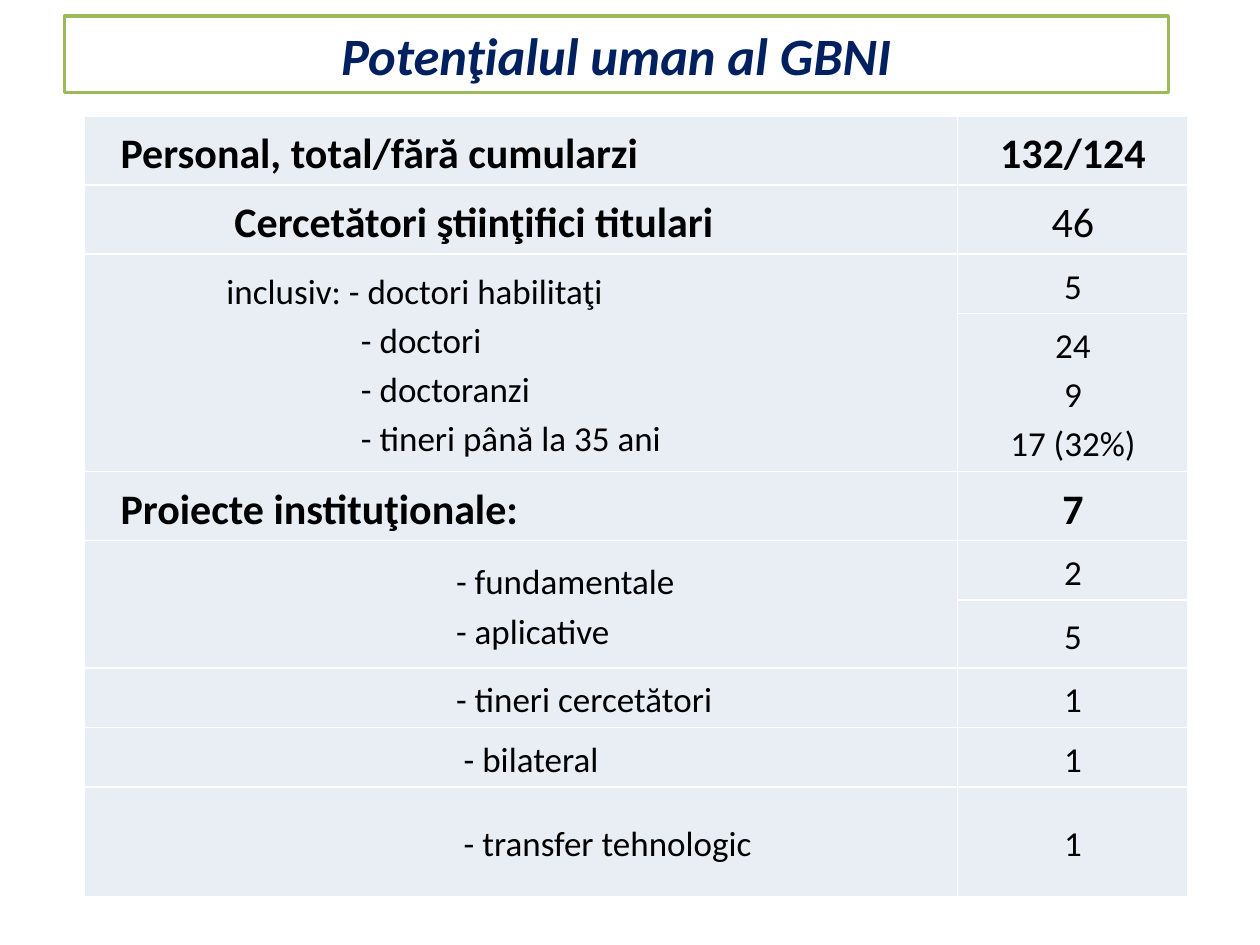
from dataclasses import dataclass

from lxml.etree import SubElement
from pptx import Presentation
from pptx.dml.color import RGBColor
from pptx.enum.text import MSO_ANCHOR as Anchor, MSO_AUTO_SIZE as AutoSize, PP_ALIGN as Align
from pptx.oxml.ns import qn
from pptx.util import Pt


@dataclass(frozen=True)
class Theme:
    font: str = "Calibri"
    title_size: int = 30
    head_size: int = 24
    body_size: int = 20
    navy: RGBColor = RGBColor(0x00, 0x20, 0x60)
    green: RGBColor = RGBColor(0x9B, 0xBB, 0x59)
    black: RGBColor = RGBColor(0, 0, 0)
    white: RGBColor = RGBColor(0xFF, 0xFF, 0xFF)
    pale: RGBColor = RGBColor(0xE9, 0xED, 0xF4)


THEME = Theme()
HEAD, BODY = THEME.head_size, THEME.body_size
COLUMN_WIDTHS = (499, 131.7)
LINE_SPACING = 1.15


@dataclass(frozen=True)
class Line:
    text: str
    indent: float = 0
    size: int = BODY
    bold: bool = False


# Each row: height, label lines, value lines; no labels means the cell above spans it
ROWS = [
    (35.3, [Line("Personal, total/fără cumularzi", 16.3, HEAD, True)],
     [Line("132/124", size=HEAD, bold=True)]),
    (35.3, [Line("Cercetători ştiinţifici titulari", 81.4, HEAD, True)],
     [Line("46", size=HEAD)]),
    (30.2, [Line("inclusiv: - doctori habilitaţi", 76.8),
            Line("- doctori", 153.7),
            Line("- doctoranzi", 153.7),
            Line("- tineri până la 35 ani", 153.7)],
     [Line("5")]),
    (83.5, [], [Line("24"), Line("9"), Line("17 (32%)")]),
    (35.3, [Line("Proiecte instituţionale:", 16.3, HEAD, True)],
     [Line("7", size=HEAD, bold=True)]),
    (30.2, [Line("- fundamentale", 208), Line("- aplicative", 208)], [Line("2")]),
    (38.9, [], [Line("5")]),
    (30.2, [Line("- tineri cercetători", 208)], [Line("1")]),
    (30.2, [Line("- bilateral", 212.4)], [Line("1")]),
    (62.6, [Line("- transfer tehnologic", 212.4)], [Line("1")]),
]


def format_font(font, size, color, bold, italic=False):
    font.name, font.size = THEME.font, Pt(size)
    font.bold, font.italic = bold, italic
    font.color.rgb = color


def add_title(page, text):
    title = page.shapes.title
    title.left, title.top, title.width, title.height = Pt(36.9), Pt(9.2), Pt(630.7), Pt(43.8)
    title.fill.solid()
    title.fill.fore_color.rgb = THEME.white
    title.line.color.rgb = THEME.green
    title.line.width = Pt(2)
    frame = title.text_frame
    frame.text = text
    frame.word_wrap = True
    frame.auto_size = AutoSize.NONE
    frame.vertical_anchor = Anchor.MIDDLE
    para = frame.paragraphs[0]
    para.alignment = Align.CENTER
    format_font(para.runs[0].font, THEME.title_size, THEME.navy, True, True)


def add_borders(cell):
    properties = cell._tc.get_or_add_tcPr()
    for side in ("a:lnL", "a:lnR", "a:lnT", "a:lnB"):
        edge = SubElement(properties, qn(side), w=str(Pt(1)))
        fill = SubElement(edge, qn("a:solidFill"))
        SubElement(fill, qn("a:srgbClr"), val=str(THEME.white))


def style_cell(cell):
    add_borders(cell)
    cell.fill.solid()
    cell.fill.fore_color.rgb = THEME.pale
    cell.vertical_anchor = Anchor.MIDDLE
    cell.margin_left = cell.margin_right = Pt(4.3)
    cell.margin_top = cell.margin_bottom = Pt(2.9)


def write_lines(cell, lines, alignment):
    cell.text_frame.text = "\n".join(line.text for line in lines)
    for para, line in zip(cell.text_frame.paragraphs, lines):
        para.alignment = alignment
        para.line_spacing = LINE_SPACING
        if line.indent:
            para._p.get_or_add_pPr().set("marL", str(Pt(line.indent)))
        format_font(para.runs[0].font, line.size, THEME.black, line.bold)


def add_staff_table(page):
    height = sum(row[0] for row in ROWS)
    table = page.shapes.add_table(len(ROWS), len(COLUMN_WIDTHS), Pt(48.3), Pt(66.3),
                                  Pt(sum(COLUMN_WIDTHS)), Pt(height)).table
    table.first_row = table.horz_banding = False
    for column, width in zip(table.columns, COLUMN_WIDTHS):
        column.width = Pt(width)
    for index, (row_height, labels, values) in enumerate(ROWS):
        table.rows[index].height = Pt(row_height)
        label, value = table.cell(index, 0), table.cell(index, 1)
        style_cell(label)
        style_cell(value)
        write_lines(value, values, Align.CENTER)
        if labels:
            write_lines(label, labels, Align.LEFT)
        else:
            table.cell(index - 1, 0).merge(label)


def main():
    deck = Presentation()
    deck.slide_width, deck.slide_height = Pt(720), Pt(540)
    page = deck.slides.add_slide(deck.slide_layouts[5])  # title only
    add_title(page, "Potenţialul uman al GBNI")
    add_staff_table(page)
    deck.save("out.pptx")


if __name__ == "__main__":
    main()
